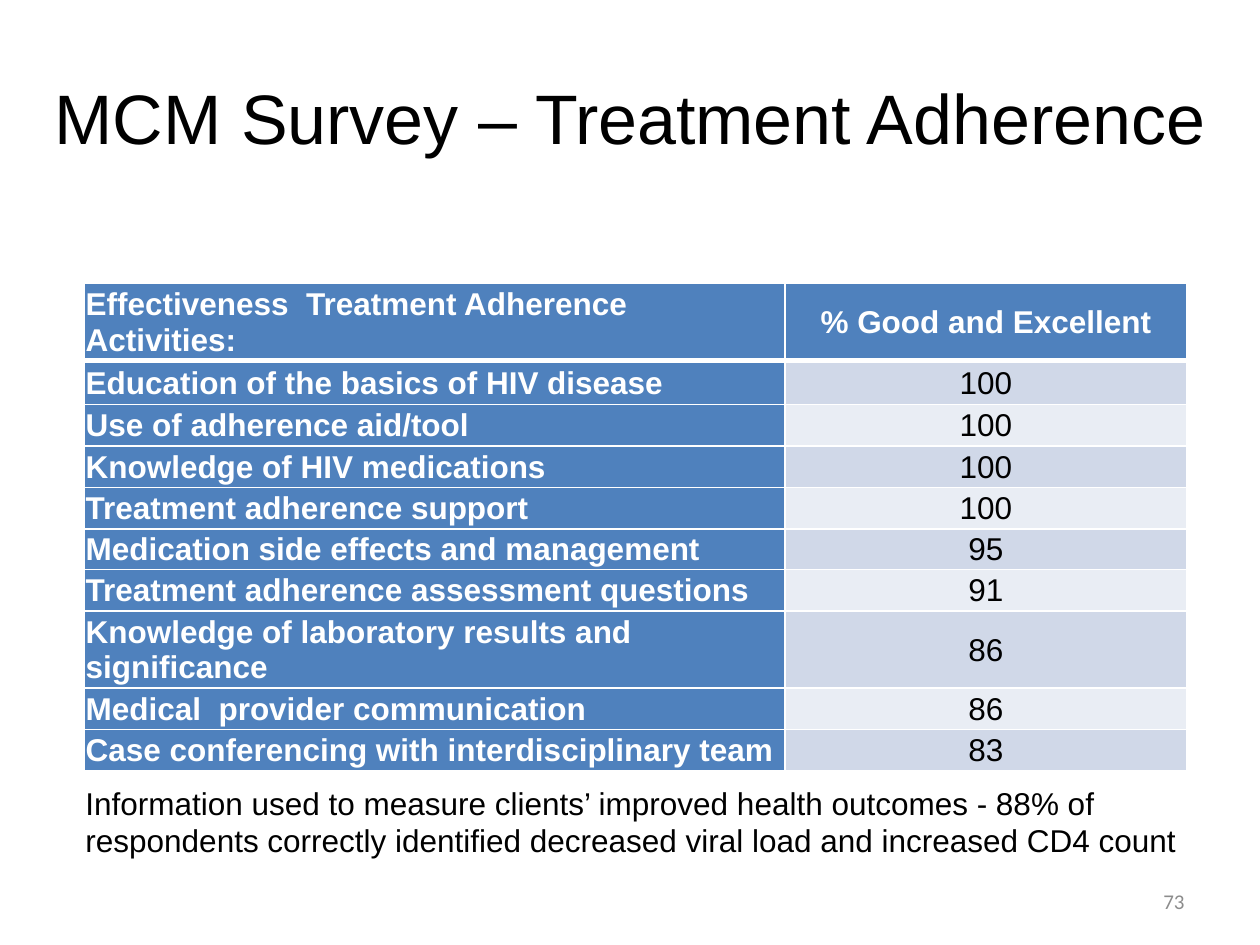
from lxml import etree
from pptx import Presentation, util as u
from pptx.dml.color import RGBColor
from pptx.enum import text as t
from pptx.oxml.ns import qn

WHITE, BLACK, GREY = "FFFFFF", "000000", "8C8C8C"
BLUE, BANDS = "4F81BD", ("D0D8E8", "E9EDF4")
LEFT, MID, RIGHT = t.PP_ALIGN.LEFT, t.PP_ALIGN.CENTER, t.PP_ALIGN.RIGHT
COLS = (5.56, 3.19)
ROW = 0.33
HEAD = ("Effectiveness  Treatment Adherence Activities:", "% Good and Excellent")
SCORES = (
    ("Education of the basics of HIV disease", 100),
    ("Use of adherence aid/tool", 100),
    ("Knowledge of HIV medications", 100),
    ("Treatment adherence support", 100),
    ("Medication side effects and management", 95),
    ("Treatment adherence assessment questions", 91),
    ("Knowledge of laboratory results and significance", 86),
    ("Medical  provider communication", 86),
    ("Case conferencing with interdisciplinary team", 83),
)
NOTE = ("Information used to measure clients’ improved health outcomes - 88% of "
        "respondents correctly identified decreased viral load and increased CD4 count")


def paint(fmt, tone):
    """Set a fill to one solid colour."""
    fmt.solid()
    fmt.fore_color.rgb = RGBColor.from_string(tone)


def write(frame, words, size, tone, align=LEFT, bold=False, face="Arial"):
    frame.text = words
    frame.word_wrap = True
    par = frame.paragraphs[0]
    par.alignment = align
    font = par.runs[0].font
    font.name, font.size, font.bold = face, u.Pt(size), bold
    paint(font.fill, tone)


def add_text(slide, place, words, size, tone, anchor=t.MSO_ANCHOR.MIDDLE, **style):
    box = slide.shapes.add_textbox(*map(u.Inches, place))
    write(box.text_frame, words, size, tone, **style)
    box.text_frame.vertical_anchor = anchor


def edge(cell, widths):
    """Draw white borders; widths maps a side (L, R, T, B) to points."""
    props = cell._tc.get_or_add_tcPr()
    for spot, side in enumerate("LRTB"):
        line = etree.Element(qn(f"a:ln{side}"), w=str(u.Pt(widths[side])))
        fill = etree.SubElement(line, qn("a:solidFill"))
        etree.SubElement(fill, qn("a:srgbClr"), val=WHITE)
        props.insert(spot, line)


def fill_cell(cell, words, row, col):
    strong = row == 0 or col == 0
    write(cell.text_frame, words, 18, WHITE if strong else BLACK,
          align=MID if col else LEFT, bold=strong)
    cell.vertical_anchor = t.MSO_ANCHOR.MIDDLE
    cell.margin_left = cell.margin_right = cell.margin_top = u.Inches(0.01)
    cell.margin_bottom = 0
    paint(cell.fill, BLUE if strong else BANDS[(row - 1) % 2])
    edge(cell, {"L": 1, "R": 1, "T": 3 if row == 1 else 1, "B": 3 if row == 0 else 1})


def add_scores(slide, left, top):
    rows = (HEAD, *SCORES)
    place = map(u.Inches, (left, top, sum(COLS), ROW * len(rows)))
    table = slide.shapes.add_table(len(rows), len(COLS), *place).table
    for col, width in enumerate(COLS):
        table.columns[col].width = u.Inches(width)
    for r, row in enumerate(rows):
        table.rows[r].height = u.Inches(ROW)
        for c, value in enumerate(row):
            fill_cell(table.cell(r, c), str(value), r, c)
    table.rows[1].height = u.Inches(0.35)
    table.rows[5].height = u.Inches(0.32)


def main():
    deck = Presentation()
    deck.slide_width, deck.slide_height = u.Inches(10), u.Inches(7.5)
    slide = deck.slides.add_slide(deck.slide_layouts[6])
    add_text(slide, (0.25, 0.3, 9.5, 1.25), "MCM Survey – Treatment Adherence",
             40, BLACK, align=MID)
    add_text(slide, (7.17, 6.95, 2.33, 0.4), "73", 12, GREY, align=RIGHT, face="Calibri")
    add_scores(slide, 0.67, 2.25)
    add_text(slide, (0.58, 6.17, 8.92, 0.71), NOTE, 18, BLACK, anchor=t.MSO_ANCHOR.TOP)
    deck.save("out.pptx")


if __name__ == "__main__":
    main()
